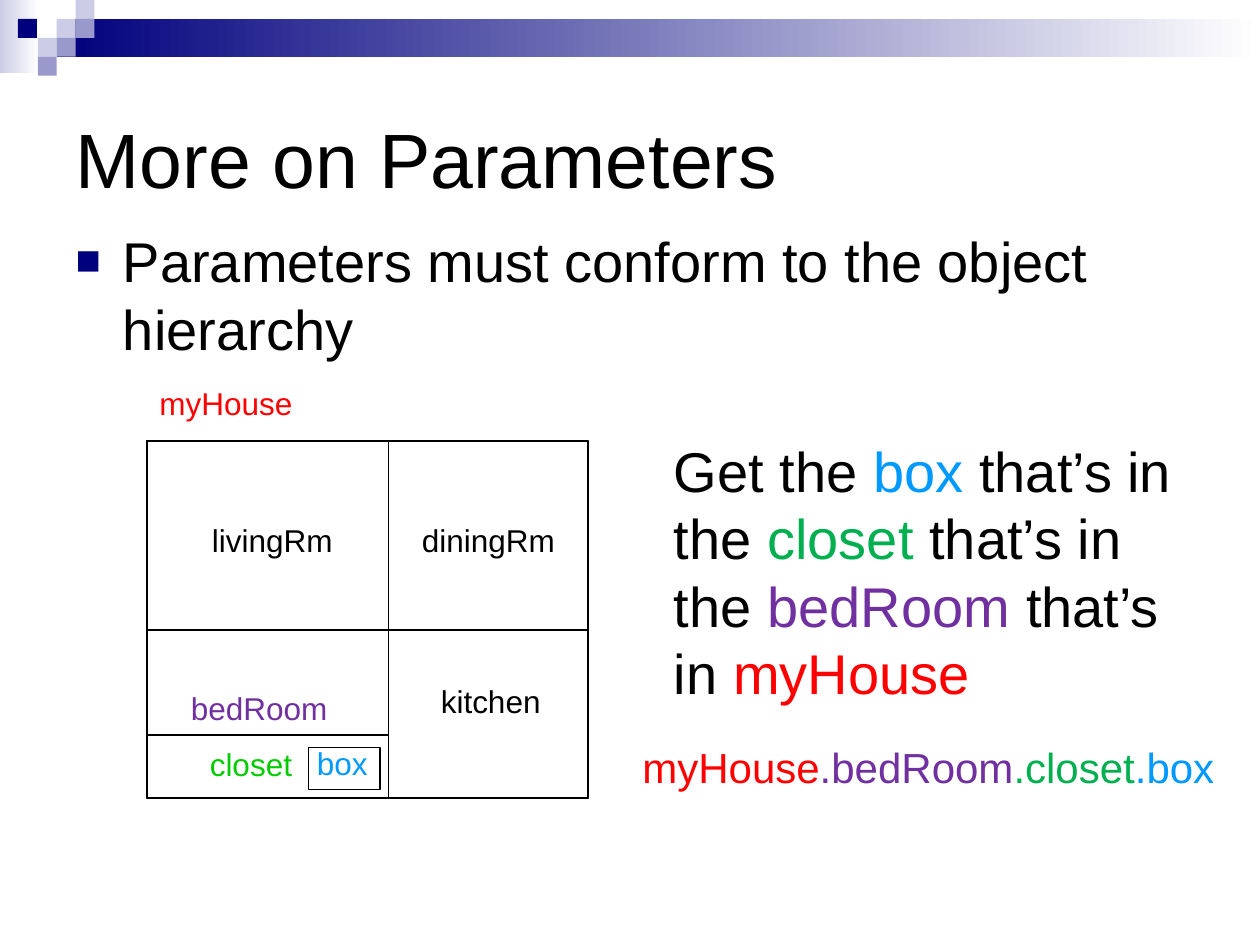
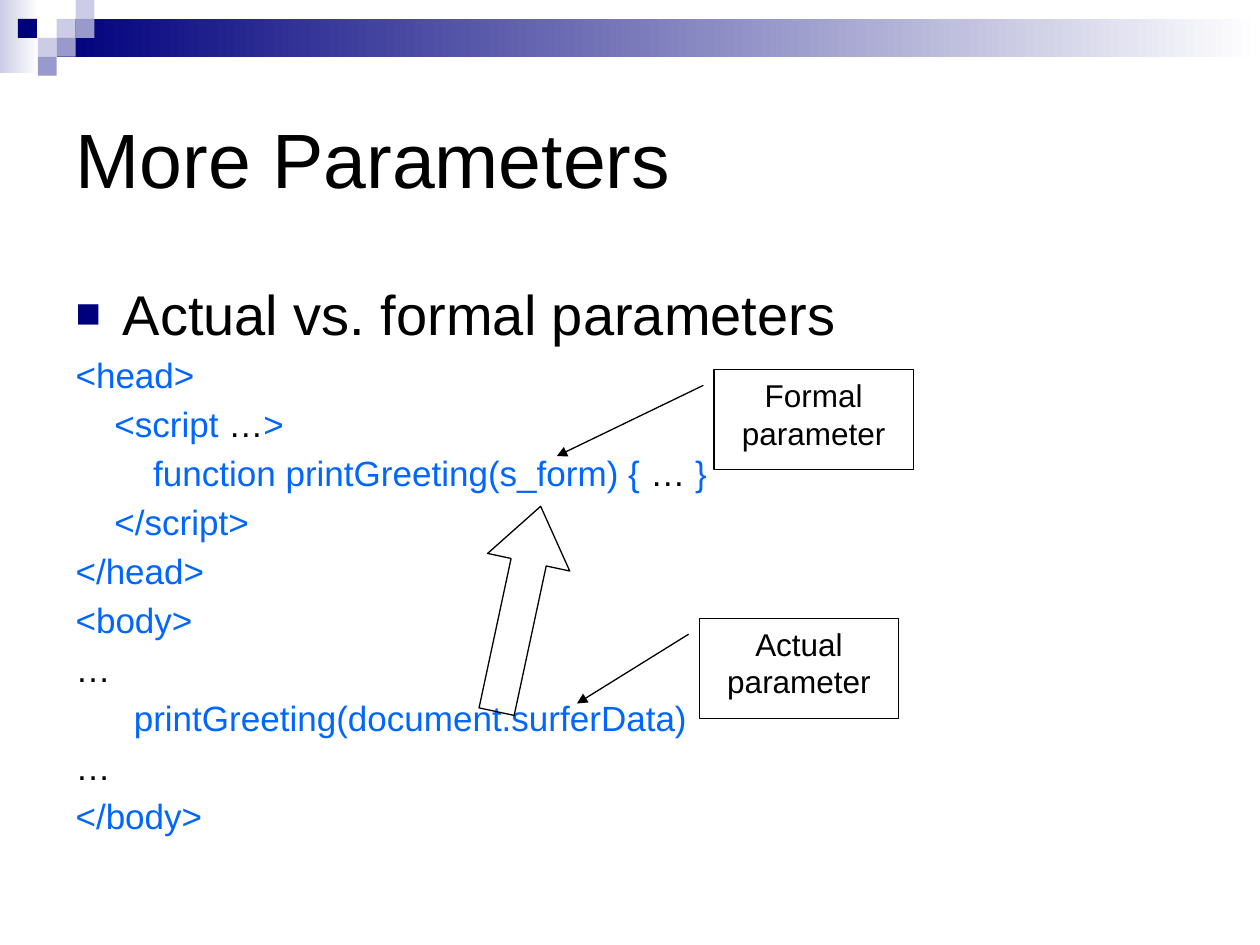
from lxml.etree import SubElement
from pptx import Presentation
from pptx.dml.color import RGBColor
from pptx.enum.shapes import MSO_SHAPE
from pptx.enum.text import MSO_ANCHOR, MSO_AUTO_SIZE, PP_ALIGN
from pptx.oxml.ns import qn
from pptx.util import Inches, Pt

# Shared style
FONT = "Arial"
BLACK, NAVY, LILAC, PALE, WHITE = "000000", "00007D", "9999CC", "CCCCE6", "FFFFFF"
RED, PURPLE, GREEN, LIME, SKY, BLUE = (
    "FF0000", "7030A0", "00B050", "00CC00", "0099FF", "0066FF")
COLS, ROWS = 120, 90
SPACE = 0.077  # inches of indent for one column of code
TILE = 1.8     # side of a band tile, in grid cells
TILES = [(3, 1, PALE), (4, 0, PALE), (4, 1, LILAC), (2, 2, PALE),
         (0.95, 1, NAVY), (3, 2, LILAC), (2, 3, LILAC)]


def tint(code):
    return RGBColor.from_string(code)


class Deck:
    def __init__(self):
        self.file = Presentation()
        self.file.slide_width, self.file.slide_height = Inches(10), Inches(7.5)
        self.slide = None

    def place(self, x, y, w, h):
        """Turn grid cells into lengths."""
        col, row = self.file.slide_width / COLS, self.file.slide_height / ROWS
        return round(x * col), round(y * row), round(w * col), round(h * row)

    def move(self, shape, cells):
        shape.left, shape.top, shape.width, shape.height = self.place(*cells)

    def fill_in(self, para, runs, size):
        for text, color in runs:
            run = para.add_run()
            run.text = text
            run.font.name, run.font.size = FONT, Pt(size)
            run.font.color.rgb = tint(color)

    def shape(self, kind, cells, fill=None, line=BLACK):
        item = self.slide.shapes.add_shape(kind, *self.place(*cells))
        item.shadow.inherit = False
        if fill:
            item.fill.solid()
            item.fill.fore_color.rgb = tint(fill)
        else:
            item.fill.background()
        if line:
            item.line.color.rgb = tint(line)
            item.line.width = Pt(0.75)
        else:
            item.line.fill.background()
        return item

    def box(self, *cells, fill=None, line=BLACK):
        return self.shape(MSO_SHAPE.RECTANGLE, cells, fill, line)

    def fade(self, color, *cells):
        fill = self.box(*cells, line=None).fill
        fill.gradient()
        fill.gradient_angle = 0
        for stop, code in zip(fill.gradient_stops, (color, WHITE)):
            stop.color.rgb = tint(code)

    def band(self):
        self.fade(PALE, 0, 0, 3.7, 7)
        self.fade(NAVY, 3 * TILE, TILE, COLS - 3 * TILE, 2 * TILE)
        for x, y, color in TILES:
            self.box(x * TILE, y * TILE, TILE, TILE, fill=color, line=None)

    def page(self, title, top):
        """Start a slide with its title; return the body's text frame."""
        self.slide = self.file.slides.add_slide(self.file.slide_layouts[1])
        self.band()
        head, body = self.slide.placeholders
        self.move(head, (6, 6, 108, 18))
        self.move(body, (6, top, 108, 82 - top))
        for item in (head, body):
            item.text_frame.auto_size = MSO_AUTO_SIZE.NONE
        head.text_frame.vertical_anchor = MSO_ANCHOR.MIDDLE
        para = head.text_frame.paragraphs[0]
        para.alignment = PP_ALIGN.LEFT
        self.fill_in(para, [(title, BLACK)], 44)
        return body.text_frame

    def point(self, frame, text):
        para = frame.paragraphs[0]
        self.fill_in(para, [(text, BLACK)], 32)
        props = para._p.get_or_add_pPr()
        SubElement(SubElement(props, qn("a:buClr")), qn("a:srgbClr"), val=NAVY)
        SubElement(props, qn("a:buSzPct"), val="75000")
        SubElement(props, qn("a:buFont"), typeface=FONT)
        SubElement(props, qn("a:buChar"), char="■")

    def code(self, frame, depth, *runs):
        para = frame.add_paragraph()
        self.fill_in(para, runs, 20)
        props = para._p.get_or_add_pPr()
        props.set("marL", str(Inches(depth * SPACE)))
        props.set("indent", "0")
        SubElement(props, qn("a:buNone"))

    def text(self, cells, *runs, size=18, wrap=False):
        frame = self.slide.shapes.add_textbox(*self.place(*cells)).text_frame
        frame.word_wrap = wrap
        self.fill_in(frame.paragraphs[0], runs, size)

    def note(self, text, x, y, tip):
        """Draw a callout whose arrow ends at tip (down, across)."""
        item = self.shape(MSO_SHAPE.LINE_CALLOUT_1, (x, y, 19, 9.5))
        for i, share in enumerate((0.158, -0.053, *tip)):
            item.adjustments[i] = share
        line = item.element.spPr.find(qn("a:ln"))
        SubElement(line, qn("a:tailEnd"), type="triangle")
        item.text_frame.vertical_anchor = MSO_ANCHOR.TOP
        item.text_frame.word_wrap = True
        para = item.text_frame.paragraphs[0]
        para.alignment = PP_ALIGN.CENTER
        self.fill_in(para, [(text, BLACK)], 18)

    def arrow(self, cells, turn, shares):
        item = self.shape(MSO_SHAPE.UP_ARROW, cells)
        item.rotation = turn
        for i, share in enumerate(shares):
            item.adjustments[i] = share


def house(deck):
    body = deck.page("More on Parameters", 21)
    deck.point(body, "Parameters must conform to the object hierarchy")

    # Floor plan: walls, then names
    left, top, mid, wide, deep = 14, 42, 23, 42, 34
    side, upper = wide - mid, 18
    deck.box(left, top, wide, deep)
    deck.box(left, top, mid, upper)
    deck.box(left + mid, top, side, upper)
    deck.box(left + mid, top + upper, side, deep - upper)
    deck.box(left, top + deep - 6, mid, 6)
    deck.box(29.4, 71.2, 6.8, 4)
    for name, color, x, y, w in [
            ("myHouse", RED, 14, 36, 19), ("livingRm", BLACK, 19, 49, 13.9),
            ("diningRm", BLACK, 39, 49, 15.1), ("kitchen", BLACK, 40.8, 64.4, 11.9),
            ("bedRoom", PURPLE, 17, 65, 15.4), ("closet", LIME, 18.8, 70.4, 10.2),
            ("box", SKY, 29, 70.3, 7.3)]:
        deck.text((x, y, w, 4.8), (name, color), wrap=name == "myHouse")

    # The path in words and in code
    deck.text((63, 41, 52, 27.1), ("Get the ", BLACK), ("box", SKY),
              (" that’s in the ", BLACK), ("closet", GREEN),
              (" that’s in the ", BLACK), ("bedRoom ", PURPLE),
              ("that’s in ", BLACK), ("myHouse", RED), size=32, wrap=True)
    deck.text((60, 70, 56.9, 6), ("myHouse", RED), (".bedRoom", PURPLE),
              (".closet", GREEN), (".box", SKY), size=24)


def params(deck):
    body = deck.page("More Parameters", 26)
    deck.point(body, "Actual vs. formal parameters")

    # Code listing
    dots = ("…", BLACK)
    for depth, *runs in [
            (0, ("<head>", BLUE)),
            (4, ("<script ", BLUE), dots, (">", BLUE)),
            (8, ("function printGreeting(s_form) { ", BLUE), ("… ", BLACK), ("}", BLUE)),
            (4, ("</script>", BLUE)),
            (0, ("</head>", BLUE)),
            (0, ("<body>", BLUE)),
            (0, dots),
            (6, ("printGreeting(document.surferData)", BLUE)),
            (0, dots),
            (0, ("</body>", BLUE))]:
        deck.code(body, depth, *runs)

    # Callouts and the arrow that links them
    deck.note("Actual parameter", 66.6, 58.9, (0.853, -0.613))
    deck.note("Formal parameter", 68, 35.2, (0.868, -0.788))
    deck.arrow((45.4, 48, 8, 20), 12.1, (0.428, 0.681))


def main():
    deck = Deck()
    house(deck)
    params(deck)
    deck.file.save("out.pptx")


if __name__ == "__main__":
    main()
